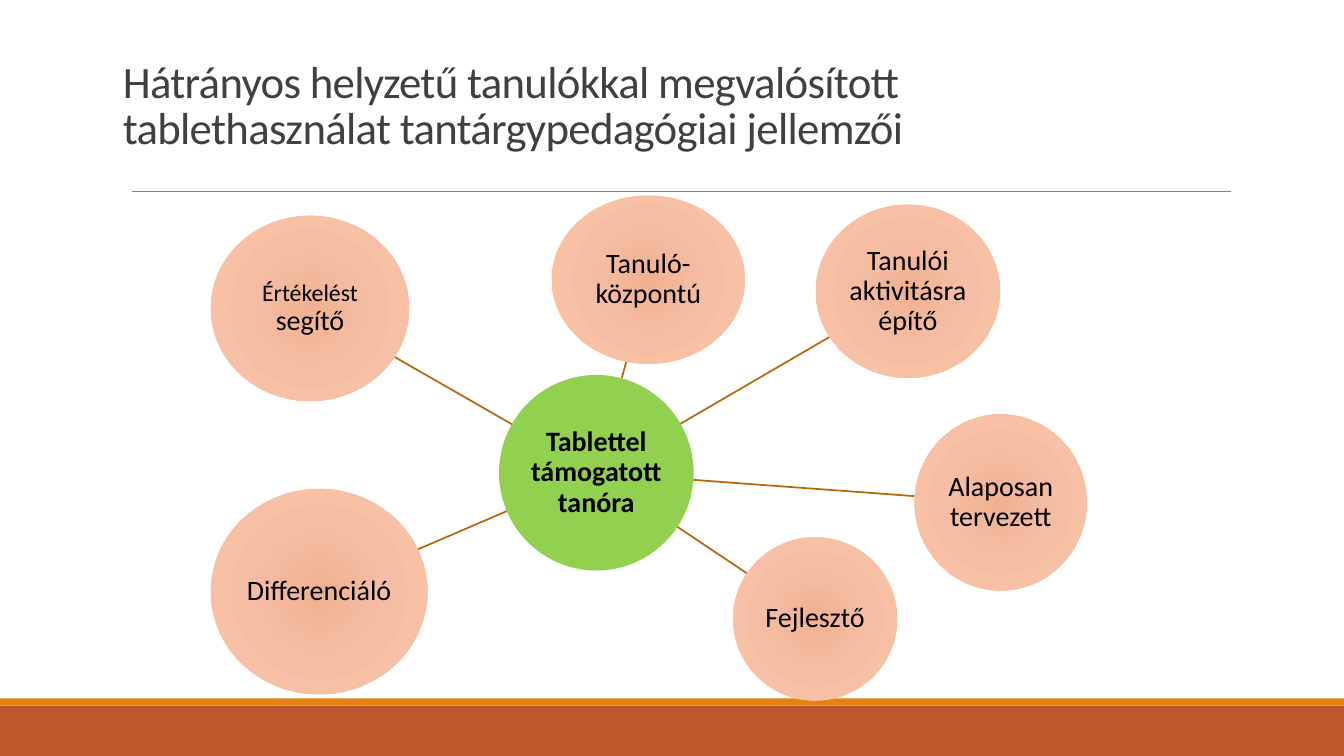
from math import hypot
from lxml import etree
from pptx import Presentation
from pptx.dml.color import RGBColor as Rgb
from pptx.enum.shapes import MSO_CONNECTOR as Conn, MSO_SHAPE as Kind
from pptx.enum.text import MSO_ANCHOR as Anchor, PP_ALIGN as Align
from pptx.oxml import parse_xml
from pptx.oxml.ns import qn
from pptx.util import Inches, Pt

NS = 'xmlns:a="http://schemas.openxmlformats.org/drawingml/2006/main"'
STOPS = ((0, "F0B191"), (45, "F5BEA4"), (100, "FDC3A8"))
HUB = (4.95, 3.72, 1.93, 1.94)
TOPICS = (
    ((5.47, 1.94, 1.92, 1.67), (("Tanuló-központú", 20),)),
    ((8.09, 2.03, 1.83, 1.72), (("Tanulói aktivitásra építő", 20),)),
    ((9.07, 4.11, 1.71, 1.75), (("Alaposan", 20), (" ", 10), ("tervezett", 20))),
    ((2.09, 4.85, 2.15, 2.04), (("Differenciáló", 20),)),
    ((7.27, 5.33, 1.63, 1.62), (("Fejlesztő", 20),)),
    ((2.09, 2.14, 1.97, 1.84), (("Értékelést ", 17), ("segítő", 20))),
)


def color(code):
    """Turn a hex string into a colour."""
    return Rgb.from_string(code)


def style(run, size, code, bold=False):
    """Format one run of text."""
    font = run.font
    font.name, font.size, font.bold = "Calibri", Pt(size), bold
    font.color.rgb = color(code)


def solid(slide, kind, box, code):
    """Add a plain filled shape in the box."""
    shape = slide.shapes.add_shape(kind, *map(Inches, box))
    shape.shadow.inherit = False
    shape.fill.solid()
    shape.fill.fore_color.rgb = color(code)
    shape.line.fill.background()
    return shape


def link(slide, start, end, code, width):
    """Draw a straight line between two points."""
    line = slide.shapes.add_connector(Conn.STRAIGHT, *map(Inches, start + end))
    line.line.color.rgb = color(code)
    line.line.width = Pt(width)
    etree.SubElement(line._element.spPr, qn("a:effectLst"))


def glow(shape):
    """Replace the solid fill with a radial gradient."""
    stops = "".join(
        f'<a:gs pos="{pos * 1000}"><a:srgbClr val="{code}"/></a:gs>'
        for pos, code in STOPS
    )
    fill = parse_xml(
        f'<a:gradFill {NS} rotWithShape="1"><a:gsLst>{stops}</a:gsLst>'
        '<a:path path="circle"><a:fillToRect l="100000" t="100000" '
        'r="100000" b="100000"/></a:path></a:gradFill>'
    )
    props = shape._element.spPr
    props.replace(props.find(qn("a:solidFill")), fill)


def bubble(slide, box, parts, code, bold=False):
    """Add an ellipse with centred text made of sized parts."""
    shape = solid(slide, Kind.OVAL, box, code)
    frame = shape.text_frame
    frame.word_wrap = True
    frame.vertical_anchor = Anchor.MIDDLE
    frame.margin_left = frame.margin_right = Inches(0.01)
    frame.margin_top = frame.margin_bottom = Inches(0.01)
    para = frame.paragraphs[0]
    para.alignment = Align.CENTER
    para.line_spacing = 0.9
    for text, size in parts:
        run = para.add_run()
        run.text = text
        style(run, size, "000000", bold)
    return shape


def middle(box):
    """Return the centre of a box."""
    left, top, width, height = box
    return left + width / 2, top + height / 2


def edge(box, goal):
    """Find where the ray from the ellipse centre to the goal leaves it."""
    x, y = middle(box)
    dx, dy = goal[0] - x, goal[1] - y
    scale = 1 / hypot(dx / (box[2] / 2), dy / (box[3] / 2))
    return x + dx * scale, y + dy * scale


def header(slide, box):
    """Place the title in the box and the rule below it."""
    left, top, width, height = box
    frame = slide.shapes.add_textbox(*map(Inches, box)).text_frame
    frame.word_wrap = True
    frame.vertical_anchor = Anchor.BOTTOM
    frame.margin_right = Inches(0.2)
    frame.text = ("Hátrányos helyzetű tanulókkal megvalósított "
                  "tablethasználat tantárgypedagógiai jellemzői")
    para = frame.paragraphs[0]
    para.line_spacing = 0.85
    run = para.runs[0]
    style(run, 32, "404040")
    run.font._element.set("spc", "-50")
    rule = top + height + 0.33
    link(slide, (left + 0.19, rule), (left + 11.09, rule), "808080", 0.5)


def footer(slide, box):
    """Fill the box with the two bottom bands."""
    left, top, width, height = box
    thin = 0.07
    solid(slide, Kind.RECTANGLE, (left, top + thin, width, height - thin), "BD582C")
    solid(slide, Kind.RECTANGLE, (left, top, width, thin), "E48312")


def diagram(slide, hub):
    """Place the hub in its box and tie each topic to it."""
    bubble(slide, hub, (("Tablettel támogatott tanóra", 20),), "92D050", True)
    for box, parts in TOPICS:
        link(slide, edge(hub, middle(box)), edge(box, middle(hub)), "B7690E", 1.25)
        glow(bubble(slide, box, parts, "F5BEA4"))


def main():
    """Build and save the slide."""
    deck = Presentation()
    deck.slide_width, deck.slide_height = Inches(13.33), Inches(7.5)
    slide = deck.slides.add_slide(deck.slide_layouts[6])
    footer(slide, (0, 6.93, 13.33, 0.57))
    header(slide, (1.12, 0.54, 10.63, 1.03))
    diagram(slide, HUB)
    deck.save("out.pptx")


if __name__ == "__main__":
    main()
